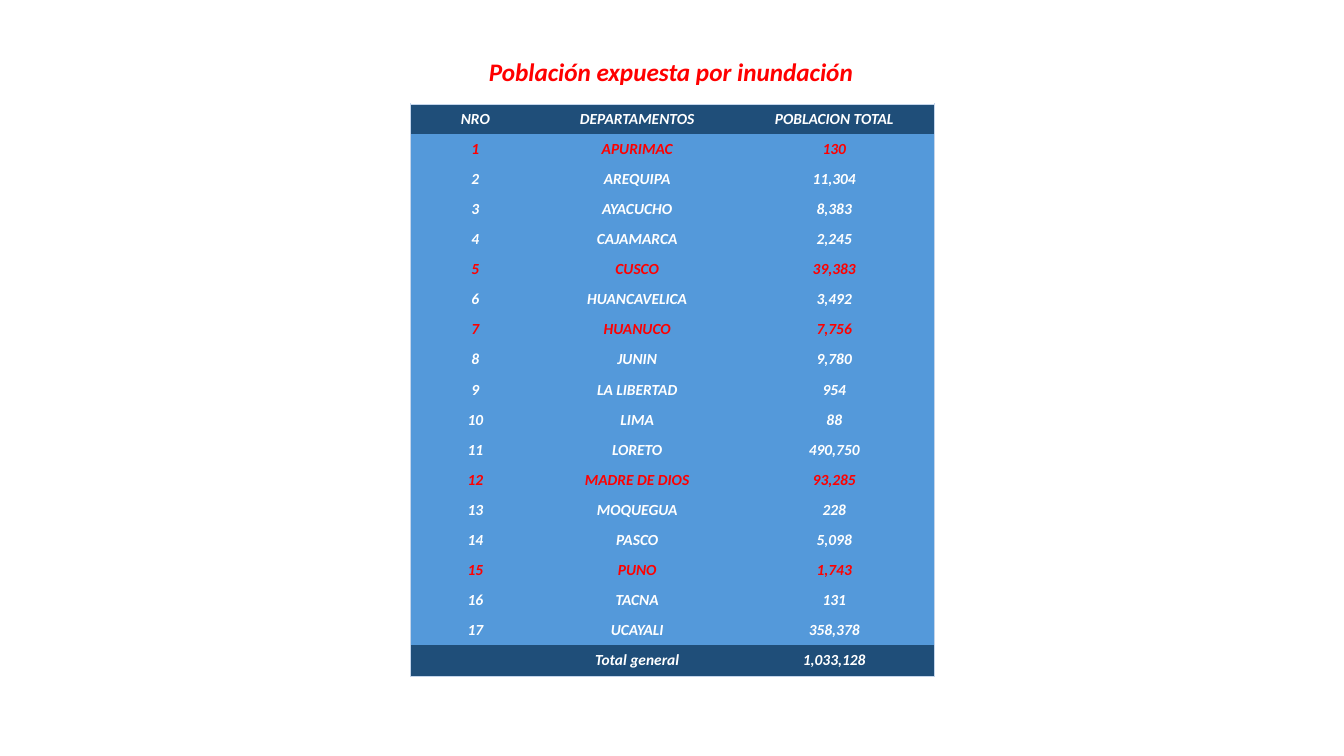
from dataclasses import dataclass

from lxml.etree import SubElement
from pptx import Presentation
from pptx.dml.color import RGBColor
from pptx.enum.text import MSO_ANCHOR, PP_ALIGN
from pptx.oxml.ns import qn
from pptx.util import Inches, Pt


@dataclass(frozen=True)
class Theme:
    font: str = "Calibri"
    title_size: int = 18
    table_size: int = 11
    border_width: float = 0.5
    highlight: str = "FF0000"
    light: str = "FFFFFF"
    band: str = "1F4E79"
    body: str = "5499DA"
    border: str = "C4D5EB"


theme = Theme()


def write(frame, text, size=theme.table_size, color=theme.light):
    paragraph = frame.paragraphs[0]
    paragraph.alignment = PP_ALIGN.CENTER
    run = paragraph.add_run()
    run.text = text
    run.font.name = theme.font
    run.font.size = Pt(size)
    run.font.bold = run.font.italic = True
    run.font.color.rgb = RGBColor.from_string(color)


def draw_borders(cell, outer_edges):
    properties = cell._tc.get_or_add_tcPr()
    for edge, is_outer in outer_edges.items():
        line = SubElement(properties, qn(f"a:ln{edge}"), w=str(Pt(theme.border_width)))
        if is_outer:
            fill = SubElement(line, qn("a:solidFill"))
            SubElement(fill, qn("a:srgbClr"), val=theme.border)
        else:
            SubElement(line, qn("a:noFill"))


departments = [
    ("APURIMAC", "130"),
    ("AREQUIPA", "11,304"),
    ("AYACUCHO", "8,383"),
    ("CAJAMARCA", "2,245"),
    ("CUSCO", "39,383"),
    ("HUANCAVELICA", "3,492"),
    ("HUANUCO", "7,756"),
    ("JUNIN", "9,780"),
    ("LA LIBERTAD", "954"),
    ("LIMA", "88"),
    ("LORETO", "490,750"),
    ("MADRE DE DIOS", "93,285"),
    ("MOQUEGUA", "228"),
    ("PASCO", "5,098"),
    ("PUNO", "1,743"),
    ("TACNA", "131"),
    ("UCAYALI", "358,378"),
]
highlighted = {"APURIMAC", "CUSCO", "HUANUCO", "MADRE DE DIOS", "PUNO"}
records = [
    ("NRO", "DEPARTAMENTOS", "POBLACION TOTAL"),
    *((str(number), *entry) for number, entry in enumerate(departments, 1)),
    ("", "Total general", "1,033,128"),
]
column_widths = [1.29, 1.92, 1.99]
last_row = len(records) - 1
last_column = len(column_widths) - 1

presentation = Presentation()
presentation.slide_width = Inches(13.33)
presentation.slide_height = Inches(7.5)
slide = presentation.slides.add_slide(presentation.slide_layouts[6])

title = slide.shapes.add_textbox(Inches(4.73), Inches(0.51), Inches(3.85), Inches(0.4))
title.text_frame.word_wrap = False
write(title.text_frame, "Población expuesta por inundación",
      size=theme.title_size, color=theme.highlight)

population = slide.shapes.add_table(
    len(records), len(column_widths),
    Inches(4.07), Inches(1.03), Inches(sum(column_widths)), Inches(5.67),
).table
for column, width in zip(population.columns, column_widths):
    column.width = Inches(width)

for row, record in enumerate(records):
    background = theme.band if row in (0, last_row) else theme.body
    color = theme.highlight if record[1] in highlighted else theme.light
    for column, value in enumerate(record):
        cell = population.cell(row, column)
        cell.vertical_anchor = MSO_ANCHOR.MIDDLE
        cell.margin_left = cell.margin_right = cell.margin_top = Inches(0.01)
        cell.margin_bottom = Inches(0)
        draw_borders(cell, {
            "L": column == 0,
            "R": column == last_column,
            "T": row == 0,
            "B": row == last_row,
        })
        cell.fill.solid()
        cell.fill.fore_color.rgb = RGBColor.from_string(background)
        write(cell.text_frame, value, color=color)

presentation.save("out.pptx")
